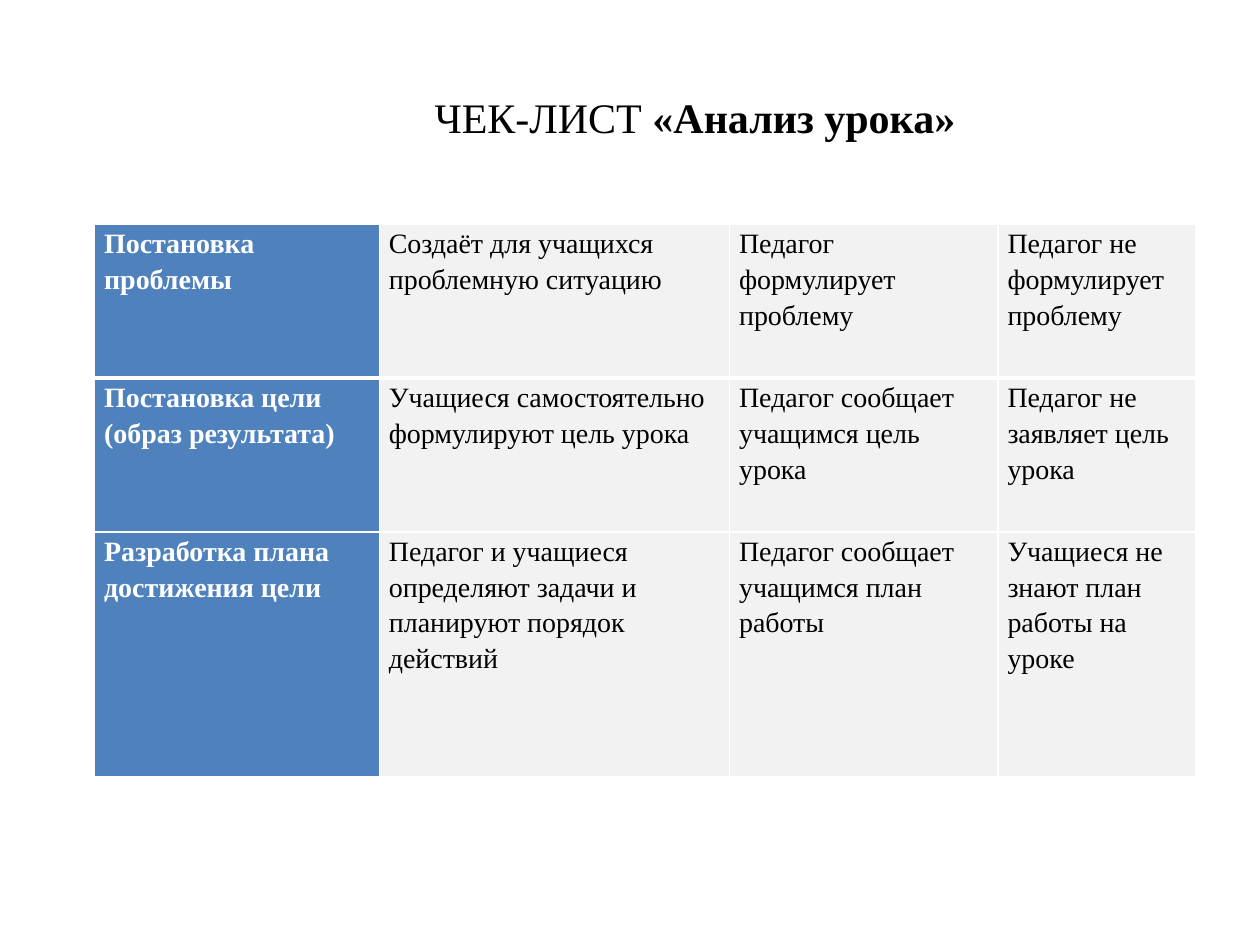
from lxml.etree import SubElement
from pptx import Presentation
from pptx.dml.color import RGBColor
from pptx.enum.text import MSO_AUTO_SIZE as AutoSize
from pptx.oxml.ns import qn
from pptx.util import Cm, Pt

FONT = "Times New Roman"
WHITE, BLACK, BLUE, GRAY = "FFFFFF", "000000", "4F81BD", "F2F2F2"

# Content
TITLE = [("ЧЕК-ЛИСТ", False), (" «Анализ урока»", True)]
ROWS = [
    ("Постановка проблемы",
     "Создаёт для учащихся проблемную ситуацию",
     "Педагог формулирует проблему",
     "Педагог не формулирует проблему"),
    ("Постановка цели (образ результата)",
     "Учащиеся самостоятельно формулируют цель урока",
     "Педагог сообщает учащимся цель урока",
     "Педагог не заявляет цель урока"),
    ("Разработка плана достижения цели",
     "Педагог и учащиеся определяют задачи и планируют порядок действий",
     "Педагог сообщает учащимся план работы",
     "Учащиеся не знают план работы на уроке"),
]
COLUMN_WIDTHS = [5.74, 7.06, 5.41, 3.99]
ROW_HEIGHTS = [3.1, 3.1, 4.93]


def color(value):
    return RGBColor.from_string(value)


def set_borders(cell, widths):
    """Draw white cell borders; widths maps a side tag to points."""
    properties = cell._tc.get_or_add_tcPr()
    for index, (side, width) in enumerate(widths.items()):
        line = SubElement(properties, qn(f"a:{side}"), w=str(Pt(width)))
        properties.insert(index, line)  # borders come before the fill
        fill = SubElement(line, qn("a:solidFill"))
        SubElement(fill, qn("a:srgbClr"), val=WHITE)


def fill_cell(cell, text, is_heading, widths):
    cell.margin_left = cell.margin_right = Cm(0.19)
    cell.margin_top = cell.margin_bottom = 0
    cell.fill.solid()
    cell.fill.fore_color.rgb = color(BLUE if is_heading else GRAY)
    cell.text = text
    paragraph = cell.text_frame.paragraphs[0]
    paragraph.line_spacing = 1.15
    font = paragraph.font
    font.name, font.size, font.bold = FONT, Pt(16), is_heading
    font.color.rgb = color(WHITE if is_heading else BLACK)
    set_borders(cell, widths)


def add_title(slide):
    box = slide.shapes.add_textbox(Cm(8.51), Cm(1.73), Cm(11.13), Cm(1.27))
    frame = box.text_frame
    frame.word_wrap = False
    frame.auto_size = AutoSize.SHAPE_TO_FIT_TEXT
    paragraph = frame.paragraphs[0]
    for text, bold in TITLE:
        run = paragraph.add_run()
        run.text = text
        run.font.bold = bold
    font = paragraph.font
    font.name, font.size = FONT, Pt(24)
    font.color.rgb = color(BLACK)


def add_checklist(slide):
    table = slide.shapes.add_table(
        len(ROWS), len(COLUMN_WIDTHS), Cm(1.91), Cm(4.52),
        Cm(sum(COLUMN_WIDTHS)), Cm(sum(ROW_HEIGHTS))).table
    table.first_row = table.horz_banding = False
    table.first_col = True
    for column, width in zip(table.columns, COLUMN_WIDTHS):
        column.width = Cm(width)
    for row, height in zip(table.rows, ROW_HEIGHTS):
        row.height = Cm(height)
    for r, texts in enumerate(ROWS):
        # A thick rule separates the first row from the rest
        widths = {"lnL": 1, "lnR": 1, "lnT": 3 if r == 1 else 1, "lnB": 3 if r == 0 else 1}
        for c, text in enumerate(texts):
            fill_cell(table.cell(r, c), text, c == 0, widths)


def main():
    presentation = Presentation()
    presentation.slide_width, presentation.slide_height = Cm(25.4), Cm(19.05)
    slide = presentation.slides.add_slide(presentation.slide_layouts[6])
    add_title(slide)
    add_checklist(slide)
    presentation.save("out.pptx")


if __name__ == "__main__":
    main()
